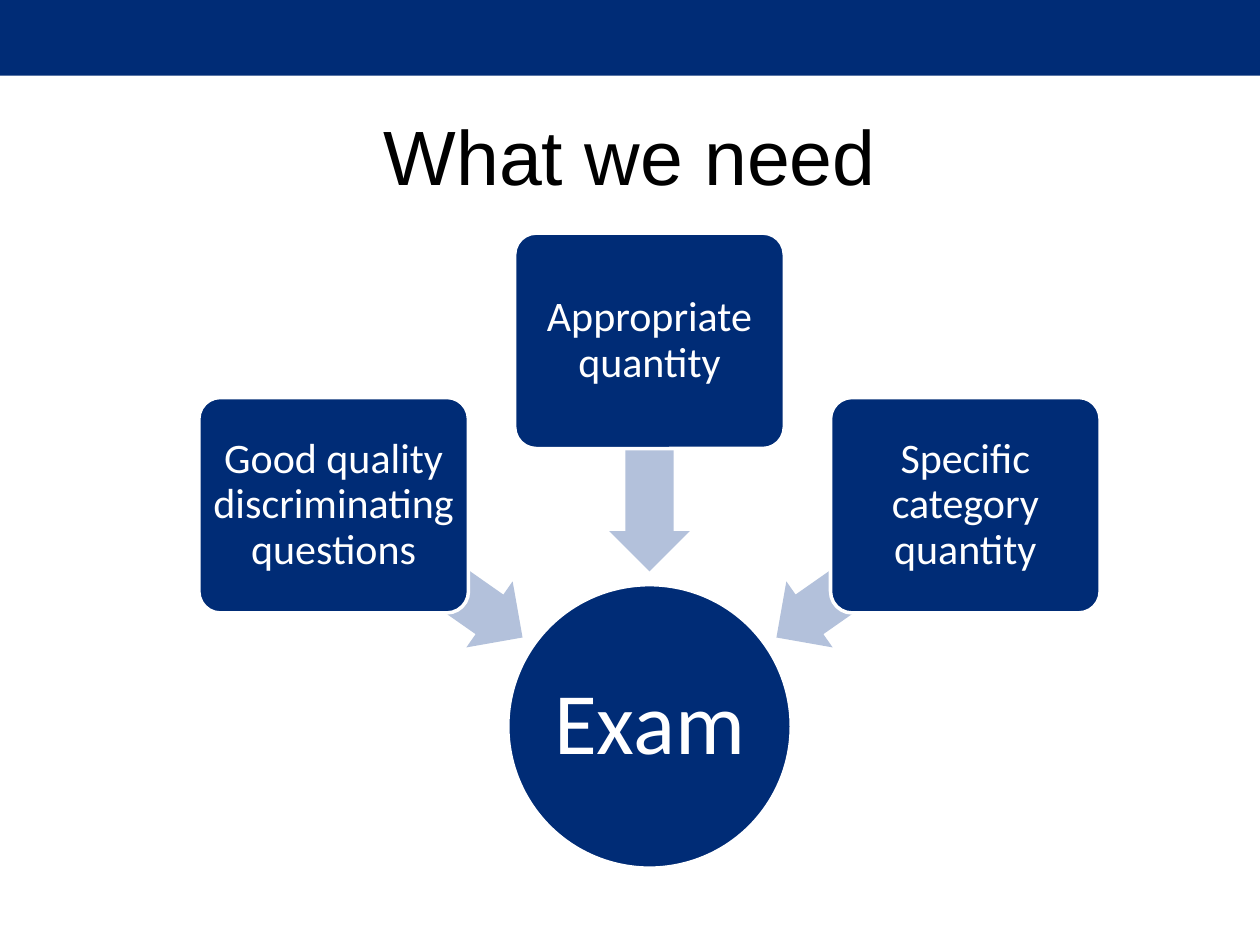
from dataclasses import dataclass
from math import cos, radians, sin

from pptx import Presentation
from pptx.dml.color import RGBColor
from pptx.enum.shapes import MSO_SHAPE
from pptx.enum.text import MSO_ANCHOR, PP_ALIGN
from pptx.util import Inches, Pt

# Square grid: 100 columns by 75 rows
COLUMNS, ROWS = 100, 75
CELL = Inches(10) // COLUMNS

NAVY, PALE, WHITE, BLACK = "002C76", "B3C1DB", "FFFFFF", "000000"

HUB_CENTRE = (51.55, 57.65)
HUB_SIZE = (22.5, 22.5)
BOX_SIZE = (21.4, 17.1)
ARROW_SIZE = (18.3, 6.4)
ARROW_RADIUS, BOX_RADIUS = 21.45, 30.6


@dataclass(frozen=True)
class Need:
    text: str
    bearing: float  # degrees clockwise from the right of the hub


NEEDS = (
    Need("Good quality discriminating questions", 215),
    Need("Appropriate quantity", 270),
    Need("Specific category quantity", 325),
)


def cells(count: float) -> int:
    return round(count * CELL)


def colour(value: str) -> RGBColor:
    return RGBColor.from_string(value)


def around_hub(radius: float, bearing: float) -> tuple[float, float]:
    angle = radians(bearing)
    return HUB_CENTRE[0] + radius * cos(angle), HUB_CENTRE[1] + radius * sin(angle)


def add_block(shapes, kind: MSO_SHAPE, centre: tuple[float, float],
              size: tuple[float, float], fill: str, outline: str | None = None,
              adjustments: tuple[float, ...] = ()):
    (x, y), (width, height) = centre, size
    block = shapes.add_shape(kind, cells(x - width / 2), cells(y - height / 2),
                             cells(width), cells(height))
    block.shadow.inherit = False
    block.fill.solid()
    block.fill.fore_color.rgb = colour(fill)
    if outline:
        block.line.color.rgb = colour(outline)
        block.line.width = Pt(2)
    else:
        block.line.fill.background()
    for index, value in enumerate(adjustments):
        block.adjustments[index] = value
    return block


def write(shape, text: str, *, size: float, font: str = "Calibri",
          ink: str = WHITE, inset: float = 0.5, spacing: float = 0.9) -> None:
    frame = shape.text_frame
    frame.word_wrap = True
    frame.vertical_anchor = MSO_ANCHOR.MIDDLE
    frame.margin_left = frame.margin_right = cells(inset)
    frame.margin_top = frame.margin_bottom = cells(inset)
    para = frame.paragraphs[0]
    para.alignment = PP_ALIGN.CENTER
    para.line_spacing = spacing
    span = para.add_run()
    span.text = text
    span.font.name = font
    span.font.size = Pt(size)
    span.font.color.rgb = colour(ink)


def add_need(shapes, need: Need) -> None:
    arrow = add_block(shapes, MSO_SHAPE.LEFT_ARROW,
                      around_hub(ARROW_RADIUS, need.bearing), ARROW_SIZE,
                      PALE, adjustments=(0.6, 0.5))
    arrow.rotation = need.bearing
    box = add_block(shapes, MSO_SHAPE.ROUNDED_RECTANGLE,
                    around_hub(BOX_RADIUS, need.bearing), BOX_SIZE,
                    NAVY, WHITE, adjustments=(0.1,))
    write(box, need.text, size=24)


def main() -> None:
    deck = Presentation()
    deck.slide_width, deck.slide_height = cells(COLUMNS), cells(ROWS)
    slide = deck.slides.add_slide(deck.slide_layouts[5])

    # Top band and title
    add_block(slide.shapes, MSO_SHAPE.RECTANGLE, (50, 3), (COLUMNS, 6), NAVY)
    title = slide.shapes.title
    title.left, title.top = cells(5), cells(6)
    title.width, title.height = cells(90), cells(12.5)
    write(title, "What we need", size=44, font="Arial", ink=BLACK, spacing=1.0)

    # Hub with the needs that point at it
    diagram = slide.shapes.add_group_shape().shapes
    hub = add_block(diagram, MSO_SHAPE.OVAL, HUB_CENTRE, HUB_SIZE, NAVY, WHITE)
    write(hub, "Exam", size=50, inset=0.3)
    for need in NEEDS:
        add_need(diagram, need)

    deck.save("out.pptx")


if __name__ == "__main__":
    main()
